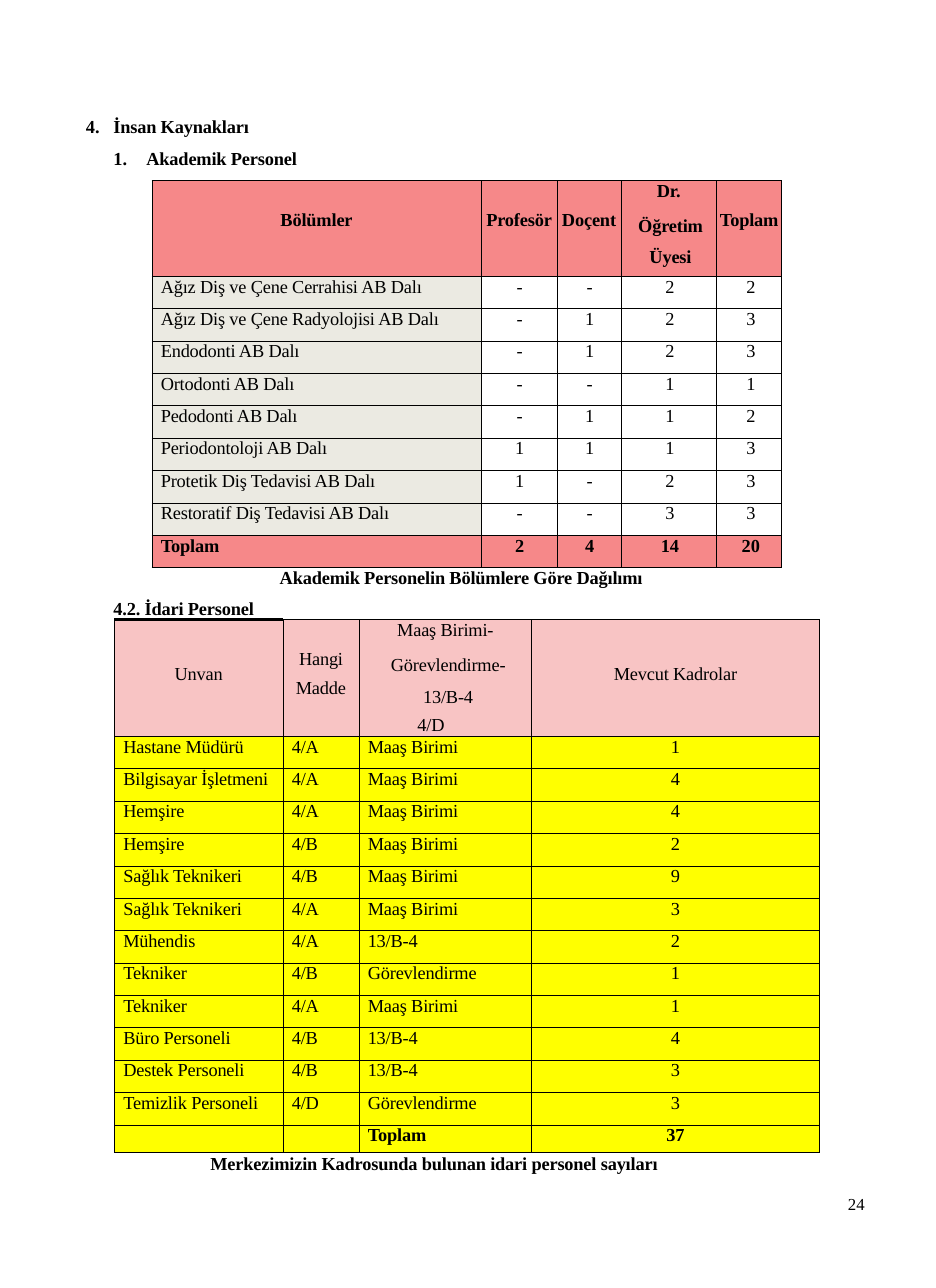
from lxml import etree
from pptx import Presentation
from pptx.dml.color import RGBColor
from pptx.enum import text
from pptx.oxml.ns import qn
from pptx.util import Inches, Pt

THEME = dict(font="Times New Roman", size=12, small=11, ink="000000",
             coral="F68889", stone="EBEAE2", pink="F8C4C4", yellow="FFFF00",
             line=0.5, thick=2.25, row=13.6, track=-10)

# Content: header cells are (top margin, paragraphs)
STAFF_HEAD = [
    (0.27, [dict(words="Bölümler")]),
    (0.27, [dict(words="Profesör")]),
    (0.27, [dict(words="Doçent")]),
    (0, [dict(words="Dr.", lead=13.8),
         dict(words="Öğretim Üyesi", left=0.03, lead=20.9, above=1.6)]),
    (0.27, [dict(words="Toplam")]),
]
STAFF = [
    ("Ağız Diş ve Çene Cerrahisi AB Dalı", "-", "-", "2", "2"),
    ("Ağız Diş ve Çene Radyolojisi AB Dalı", "-", "1", "2", "3"),
    ("Endodonti AB Dalı", "-", "1", "2", "3"),
    ("Ortodonti AB Dalı", "-", "-", "1", "1"),
    ("Pedodonti AB Dalı", "-", "1", "1", "2"),
    ("Periodontoloji AB Dalı", "1", "1", "1", "3"),
    ("Protetik Diş Tedavisi AB Dalı", "1", "-", "2", "3"),
    ("Restoratif Diş Tedavisi AB Dalı", "-", "-", "3", "3"),
    ("Toplam", "2", "4", "14", "20"),
]
OFFICE_HEAD = [
    (0.4, [dict(words="Unvan")]),
    (0.19, [dict(words="Hangi Madde", left=0.09, right=0.09, lead=19)]),
    (0, [dict(words="Maaş Birimi-", lead=13.9),
         dict(words="Görevlendirme- 13/B-4", left=0.05, lead=20.8, above=1.6),
         dict(words="4/D", right=0.26, lead=13.9, above=4.5)]),
    (0.4, [dict(words="Mevcut Kadrolar")]),
]
OFFICE = [
    ("Hastane Müdürü", "4/A", "Maaş Birimi", "1"),
    ("Bilgisayar İşletmeni", "4/A", "Maaş Birimi", "4"),
    ("Hemşire", "4/A", "Maaş Birimi", "4"),
    ("Hemşire", "4/B", "Maaş Birimi", "2"),
    ("Sağlık Teknikeri", "4/B", "Maaş Birimi", "9"),
    ("Sağlık Teknikeri", "4/A", "Maaş Birimi", "3"),
    ("Mühendis", "4/A", "13/B-4", "2"),
    ("Tekniker", "4/B", "Görevlendirme", "1"),
    ("Tekniker", "4/A", "Maaş Birimi", "1"),
    ("Büro Personeli", "4/B", "13/B-4", "4"),
    ("Destek Personeli", "4/B", "13/B-4", "3"),
    ("Temizlik Personeli", "4/D", "Görevlendirme", "3"),
    ("", "", "Toplam", "37"),
]
# Text boxes: (left, top, width, height), top inset, paragraphs
BOXES = [
    ((7.66, 10.84, 0.24, 0.2), 0,
     [dict(words="24", left=0.04, size=THEME["small"], lead=13.2)]),
    ((0.77, 0.95, 1.97, 0.6), 0.1,
     [dict(words="İnsan Kaynakları", bold=True, left=0.26, hang=-0.25, start=4, above=7.3),
      dict(words="Akademik Personel", bold=True, left=0.56, hang=-0.3, start=1,
           level=1, above=6.3)]),
    ((1.02, 5.04, 4.91, 0.6), 0.1,
     [dict(words="Akademik Personelin Bölümlere Göre Dağılımı", bold=True, left=1.52, above=7.3),
      dict(words="4.2. İdari Personel", bold=True, left=0.01, above=6.3)]),
    ((1.9, 10.46, 4.18, 0.23), 0.01,
     [dict(words="Merkezimizin Kadrosunda bulunan idari personel sayıları", bold=True,
           left=0.01, above=1)]),
]


def write(para, words, bold=False, size=THEME["size"], left=0, right=0, hang=0,
          lead=None, above=0, start=None, level=0, mid=False):
    para.level = level
    para.alignment = text.PP_ALIGN.CENTER if mid else text.PP_ALIGN.LEFT
    para.space_before = Pt(above)
    if lead:
        para.line_spacing = Pt(lead)
    props = para._p.get_or_add_pPr()
    for name, value in (("marL", left), ("marR", right), ("indent", hang)):
        props.set(name, str(Inches(value)))
    if start:
        etree.SubElement(props, qn("a:buAutoNum"), type="arabicPeriod", startAt=str(start))
    if not words:
        etree.SubElement(para._p, qn("a:endParaRPr"), sz=str(size * 100))
        return
    run = para.add_run()
    run.text = words
    run.font.name, run.font.size, run.font.bold = THEME["font"], Pt(size), bold
    run.font.color.rgb = RGBColor.from_string(THEME["ink"])
    if not words.isdigit():
        run._r.get_or_add_rPr().set("spc", str(THEME["track"]))


def fill_frame(frame, paras, **extra):
    for i, para in enumerate(paras):
        write(frame.add_paragraph() if i else frame.paragraphs[0], **para, **extra)


def paint(cell, fill, top=0, thick=False):
    cell.margin_left = cell.margin_right = cell.margin_bottom = 0
    cell.margin_top = Inches(top)
    props = cell._tc.get_or_add_tcPr()
    for side in "LRTB":
        width = THEME["thick" if thick and side == "T" else "line"]
        edge = etree.SubElement(props, qn("a:ln" + side), w=str(Pt(width)))
        ink = etree.SubElement(edge, qn("a:solidFill"))
        etree.SubElement(ink, qn("a:srgbClr"), val=THEME["ink"])
    if fill:
        cell.fill.solid()
        cell.fill.fore_color.rgb = RGBColor.from_string(THEME[fill])
    else:
        cell.fill.background()


def add_grid(slide, spot, cols, rows, head, body, pads, mids, tint, bold_head, thick=False):
    """tint(row, col) names the fill; the last body row is the bold total."""
    grid = slide.shapes.add_table(len(rows), len(cols), *map(Inches, spot),
                                  Inches(sum(cols)), Inches(sum(rows))).table
    grid.first_row = grid.horz_banding = False
    for col, width in zip(grid.columns, cols):
        col.width = Inches(width)
    for row, height in zip(grid.rows, rows):
        row.height = Inches(height)
    for c, (top, paras) in enumerate(head):
        cell = grid.cell(0, c)
        paint(cell, tint(0, c), top, thick and c == 0)
        fill_frame(cell.text_frame, paras, bold=bold_head, mid=True)
    for r, line in enumerate(body, 1):
        for c, words in enumerate(line):
            cell = grid.cell(r, c)
            paint(cell, tint(r, c))
            write(cell.text_frame.paragraphs[0], words, bold=r == len(body),
                  left=pads[c], lead=THEME["row"], mid=mids[c])


def staff_tint(row, col):
    if row in (0, len(STAFF)):
        return "coral"
    return None if col else "stone"


def office_tint(row, col):
    return "yellow" if row else "pink"


def main():
    deck = Presentation()
    deck.slide_width, deck.slide_height = Inches(8.5), Inches(11.7)
    slide = deck.slides.add_slide(deck.slide_layouts[6])

    # Tables: equal body rows share what the header leaves
    step = (3.52 - 0.87) / len(STAFF)
    add_grid(slide, (1.38, 1.64), [2.99, 0.69, 0.58, 0.87, 0.59],
             [0.87] + [step] * len(STAFF), STAFF_HEAD, STAFF,
             [0.08, 0.01, 0.01, 0.02, 0.03], [False] + [True] * 4, staff_tint, True)
    count = len(OFFICE) - 1
    step = (4.84 - 1.06 - 0.25) / count
    add_grid(slide, (1.04, 5.63), [1.53, 0.69, 1.57, 2.61],
             [1.06] + [step] * count + [0.25], OFFICE_HEAD, OFFICE,
             [0.08] * 3 + [0], [False] * 3 + [True], office_tint, False, thick=True)

    # Headings, captions and page number
    for place, top, paras in BOXES:
        frame = slide.shapes.add_textbox(*map(Inches, place)).text_frame
        frame.word_wrap = True
        frame.margin_left = frame.margin_right = frame.margin_bottom = 0
        frame.margin_top = Inches(top)
        fill_frame(frame, paras)

    deck.save("out.pptx")


if __name__ == "__main__":
    main()
